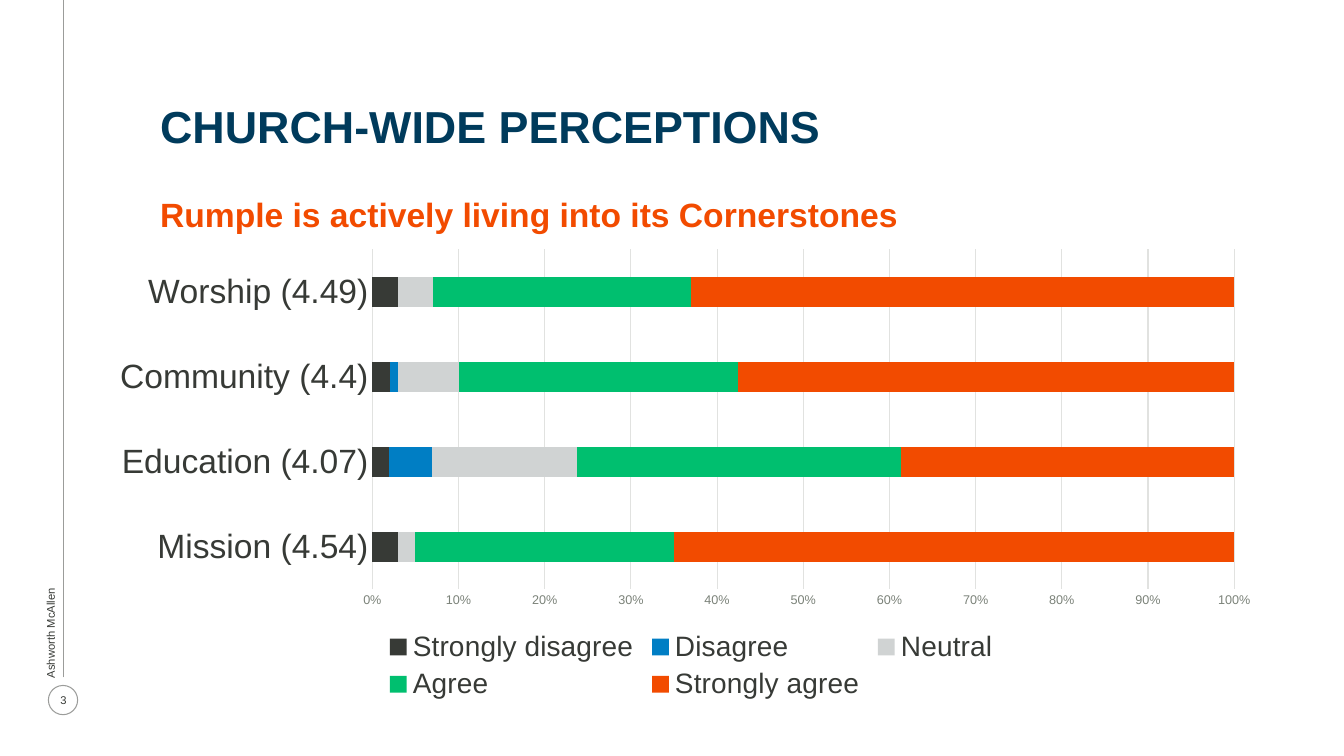
"""Build the church-wide perceptions survey slide."""
import lxml.etree
import pptx
import pptx.chart.data
import pptx.dml.color
import pptx.enum.chart
import pptx.enum.shapes
import pptx.enum.text
import pptx.oxml
import pptx.oxml.ns
import pptx.util

PX = 9144
FONT = "Arial"
COLORS = {
    "text": "373A36", "navy": "003B5C", "orange": "F24B00", "blue": "007EC4",
    "silver": "D0D3D3", "green": "00BF6F", "rule": "9B9C9A", "grid": "E1E2E0",
    "tick": "7B8279",
}
CATEGORIES = ["Mission (4.54)", "Education (4.07)", "Community (4.4)", "Worship (4.49)"]
SERIES = [
    ("Strongly disagree", "text", (3, 2, 2, 3)),
    ("Disagree", "blue", (0, 5, 1, 0)),
    ("Neutral", "silver", (2, 17, 7, 4)),
    ("Agree", "green", (30, 38, 32, 30)),
    ("Strongly agree", "orange", (65, 39, 57, 63)),
]


def emu(*lengths):
    """Turn px lengths into EMU."""
    return [pptx.util.Emu(n * PX) for n in lengths]


def rgb(name):
    """Look up a named colour."""
    return pptx.dml.color.RGBColor.from_string(COLORS[name])


def set_line(line, color):
    """Give a line its colour and the common hairline width."""
    line.color.rgb = rgb(color)
    line.width = pptx.util.Pt(0.75)


def set_font(font, size, color, bold=False):
    """Set face, size, colour and weight."""
    font.name = FONT
    font.size = pptx.util.Pt(size)
    font.color.rgb = rgb(color)
    font.bold = bold


def add_text(s, box, text, size, color, bold=False, spacing=1.0, align="LEFT"):
    """Add a one-line text box."""
    sp = s.shapes.add_textbox(*emu(*box))
    tf = sp.text_frame
    tf.word_wrap = True
    p = tf.paragraphs[0]
    p.alignment = getattr(pptx.enum.text.PP_ALIGN, align)
    p.line_spacing = spacing
    r = p.add_run()
    r.text = text
    set_font(r.font, size, color, bold)
    return sp


def add_margin(s, box):
    """Draw the side rule, the firm name along it and the page number."""
    x, y, w, h = box
    center = x + w // 2
    badge = 29
    badge_y = y + h - badge
    rule = s.shapes.add_connector(
        pptx.enum.shapes.MSO_CONNECTOR.STRAIGHT, *emu(center, badge_y - 8, center, y))
    set_line(rule.line, "rule")
    lxml.etree.SubElement(rule.element.spPr, pptx.oxml.ns.qn("a:effectLst"))
    circle = s.shapes.add_shape(
        pptx.enum.shapes.MSO_SHAPE.OVAL, *emu(center - 15, badge_y, badge, badge))
    circle.shadow.inherit = False
    circle.fill.background()
    set_line(circle.line, "rule")
    firm = add_text(s, (center - 86, badge_y - 83, 147, 24), "Ashworth McAllen", 8, "text")
    firm.rotation = 270
    add_text(s, (x, badge_y + 3, w, 24), "3", 8, "text", align="CENTER")


def add_heading(s, box):
    """Place the title and the statement beneath it."""
    x, y, w, h = box
    add_text(s, (x, y, w, 61), "CHURCH-WIDE PERCEPTIONS", 32, "navy", True, 0.9)
    add_text(s, (x, y + h - 50, w, 50), "Rumple is actively living into its Cornerstones",
             24, "orange", True, 1.07)


def set_plot_area(chart, x, y, w, h):
    """Fix the inner plot area as fractions of the chart."""
    area = chart.element.chart.plotArea
    for old in area.findall(pptx.oxml.ns.qn("c:layout")):
        area.remove(old)
    sizes = "".join(f'<c:{tag} val="{val}"/>' for tag, val in zip("xywh", (x, y, w, h)))
    area.insert(0, pptx.oxml.parse_xml(
        f'<c:layout {pptx.oxml.ns.nsdecls("c")}><c:manualLayout>'
        '<c:layoutTarget val="inner"/><c:xMode val="edge"/><c:yMode val="edge"/>'
        f'{sizes}</c:manualLayout></c:layout>'))


def add_survey_chart(s, box):
    """Add the stacked bars of survey answers."""
    data = pptx.chart.data.CategoryChartData()
    data.categories = CATEGORIES
    for name, _, values in SERIES:
        data.add_series(name, values)
    chart = s.shapes.add_chart(
        pptx.enum.chart.XL_CHART_TYPE.BAR_STACKED_100, *emu(*box), data).chart
    chart.has_title = False
    set_font(chart.font, 10, "text")
    plot = chart.plots[0]
    plot.gap_width = 182
    plot.overlap = 100
    plot.vary_by_categories = False
    for series, (_, color, _) in zip(plot.series, SERIES):
        series.format.fill.solid()
        series.format.fill.fore_color.rgb = rgb(color)

    for axis, size, color in ((chart.category_axis, 24, "text"), (chart.value_axis, 9, "tick")):
        axis.major_tick_mark = pptx.enum.chart.XL_TICK_MARK.NONE
        axis.minor_tick_mark = pptx.enum.chart.XL_TICK_MARK.NONE
        set_font(axis.tick_labels.font, size, color)
    set_line(chart.category_axis.format.line, "grid")
    value_axis = chart.value_axis
    value_axis.minimum_scale = 0
    value_axis.maximum_scale = 1
    value_axis.major_unit = 0.1
    value_axis.format.line.fill.background()
    value_axis.has_major_gridlines = True
    set_line(value_axis.major_gridlines.format.line, "grid")
    value_axis.tick_labels.number_format = "0%"
    value_axis.tick_labels.number_format_is_linked = False

    chart.has_legend = True
    chart.legend.position = pptx.enum.chart.XL_LEGEND_POSITION.BOTTOM
    chart.legend.include_in_layout = False
    set_font(chart.legend.font, 20, "text")
    set_plot_area(chart, 0.23, 0.02, 0.73, 0.73)


def main():
    """Assemble and save the slide."""
    prs = pptx.Presentation()
    prs.slide_width, prs.slide_height = emu(1333, 750)
    s = prs.slides.add_slide(prs.slide_layouts[6])
    add_margin(s, (42, 0, 42, 709))
    add_heading(s, (149, 99, 1013, 136))
    add_survey_chart(s, (100, 238, 1171, 462))
    prs.save("out.pptx")


if __name__ == "__main__":
    main()
